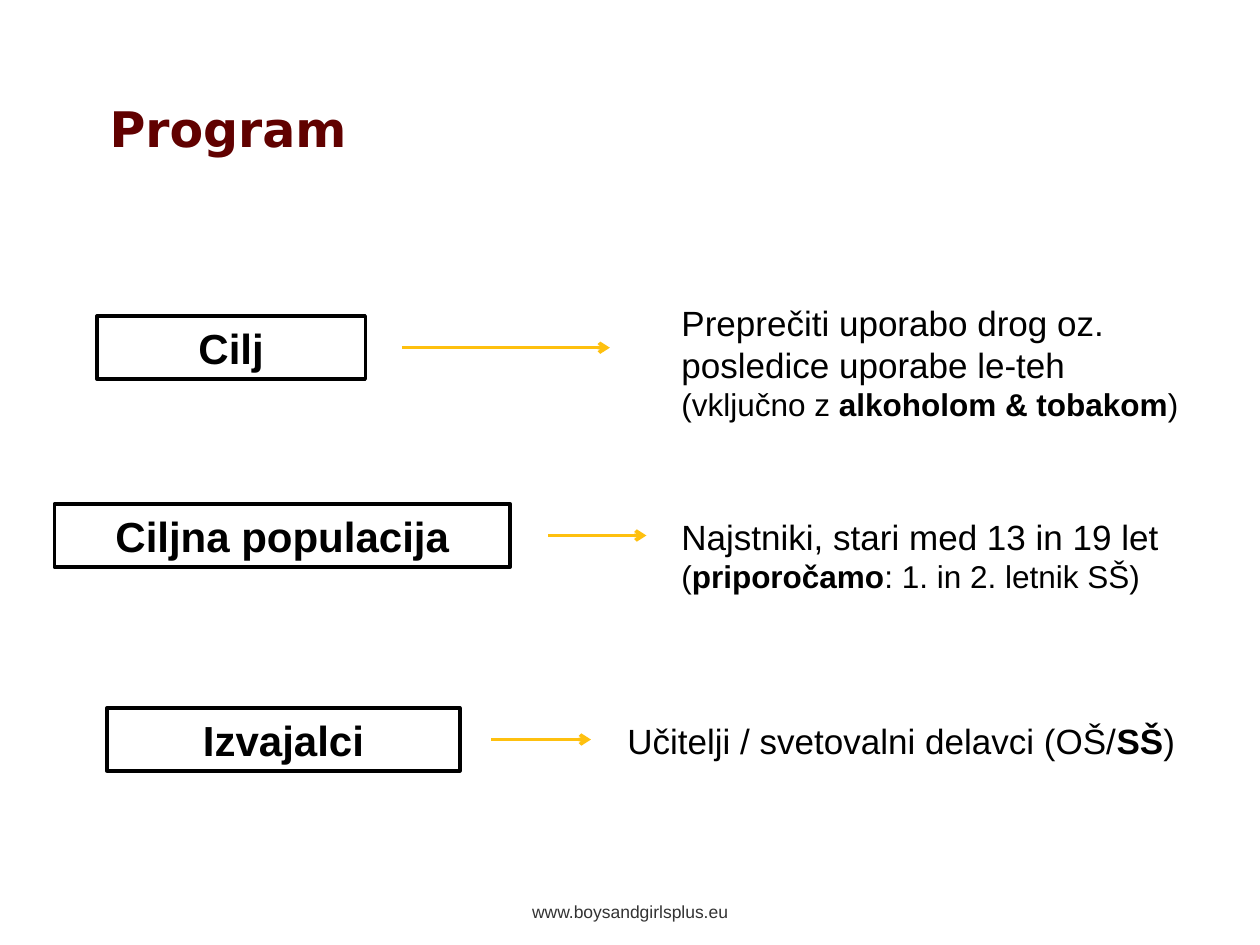
from lxml import etree
from pptx import Presentation
from pptx.dml.color import RGBColor
from pptx.enum.shapes import MSO_CONNECTOR, MSO_SHAPE
from pptx.enum.text import MSO_ANCHOR, MSO_AUTO_SIZE, PP_ALIGN
from pptx.oxml.ns import qn
from pptx.util import Pt

LEFT, CENTER = PP_ALIGN.LEFT, PP_ALIGN.CENTER
COLORS = {"title": "610100", "text": "000000", "box": "FFFFFF",
          "arrow": "FEC00F", "footer": "333333"}
BOX_H = 36

# Content: paragraphs are lists of (text, size, bold) runs
TITLE = "Program"
FOOTER = "www.boysandgirlsplus.eu"
ROWS = [
    {"label": "Cilj", "box": (55.4, 180.7, 153.4), "arrow": (229.7, 348.5),
     "note": (382.3, 168.5, 300.2, 77.8),
     "paragraphs": [[("Preprečiti uporabo drog oz. posledice uporabe le-teh ", 20, False),
                     ("(vključno z ", 18, False),
                     ("alkoholom & tobakom", 18, True), (")", 18, False)]]},
    {"label": "Ciljna populacija", "box": (31, 288, 260.6), "arrow": (313.2, 369.4),
     "note": (382.3, 290.9, 300.2, 53.3),
     "paragraphs": [[("Najstniki, stari med 13 in 19 let", 20, False)],
                    [("(", 18, False), ("priporočamo", 18, True),
                     (": 1. in 2. letnik SŠ)", 18, False)]]},
    {"label": "Izvajalci", "box": (61.2, 404.6, 201.6), "arrow": (280.8, 337.7),
     "note": (351.4, 407.5, 347, 31.7),
     "paragraphs": [[("Učitelji / svetovalni delavci (OŠ/", 20, False),
                     ("SŠ", 20, True), (")", 20, False)]]},
]


def rgb(name):
    return RGBColor.from_string(COLORS[name])


def add_run(p, text, size=20, bold=False, color="text", font="Arial"):
    r = p.add_run()
    r.text = text
    r.font.size, r.font.bold, r.font.name = Pt(size), bold, font
    r.font.color.rgb = rgb(color)


def fill_text(tf, paragraphs, align=LEFT, anchor=MSO_ANCHOR.TOP, wrap=True, **style):
    tf.word_wrap = wrap
    tf.auto_size = MSO_AUTO_SIZE.NONE
    tf.vertical_anchor = anchor
    for i, runs in enumerate(paragraphs):
        p = tf.add_paragraph() if i else tf.paragraphs[0]
        p.alignment = align
        for text, size, bold in runs:
            add_run(p, text, size=size, bold=bold, **style)


def add_label(s, text, left, top, width):
    sp = s.shapes.add_shape(MSO_SHAPE.RECTANGLE, Pt(left), Pt(top), Pt(width), Pt(BOX_H))
    sp.shadow.inherit = False
    sp.fill.solid()
    sp.fill.fore_color.rgb = rgb("box")
    sp.line.color.rgb = rgb("text")
    sp.line.width = Pt(2)
    fill_text(sp.text_frame, [[(text, 24, True)]], align=CENTER)


def add_arrow(s, start, end, y):
    c = s.shapes.add_connector(MSO_CONNECTOR.STRAIGHT, Pt(start), Pt(y), Pt(end), Pt(y))
    c.line.color.rgb = rgb("arrow")
    c.line.width = Pt(2)
    etree.SubElement(c.line._get_or_add_ln(), qn("a:tailEnd"), type="arrow")
    etree.SubElement(c._element.spPr, qn("a:effectLst"))


def add_text(s, paragraphs, left, top, width, height, **style):
    sp = s.shapes.add_textbox(Pt(left), Pt(top), Pt(width), Pt(height))
    fill_text(sp.text_frame, paragraphs, **style)


def main():
    prs = Presentation()
    prs.slide_width, prs.slide_height = Pt(720), Pt(540)
    s = prs.slides.add_slide(prs.slide_layouts[5])

    # Title
    title = s.shapes.title
    title.left, title.top, title.width, title.height = Pt(55.4), Pt(56.2), Pt(620.6), Pt(33.8)
    fill_text(title.text_frame, [[(TITLE, 28, True)]], anchor=MSO_ANCHOR.MIDDLE,
              color="title", font="DejaVu Sans")

    # Label, arrow and explanation in each row
    for row in ROWS:
        add_label(s, row["label"], *row["box"])
        add_arrow(s, *row["arrow"], row["box"][1] + BOX_H / 2)
        add_text(s, row["paragraphs"], *row["note"])

    # Footer
    add_text(s, [[(FOOTER, 10, False)]], 295.9, 511.2, 128.2, 19.4,
             align=CENTER, wrap=False, color="footer")

    prs.save("out.pptx")


if __name__ == "__main__":
    main()
